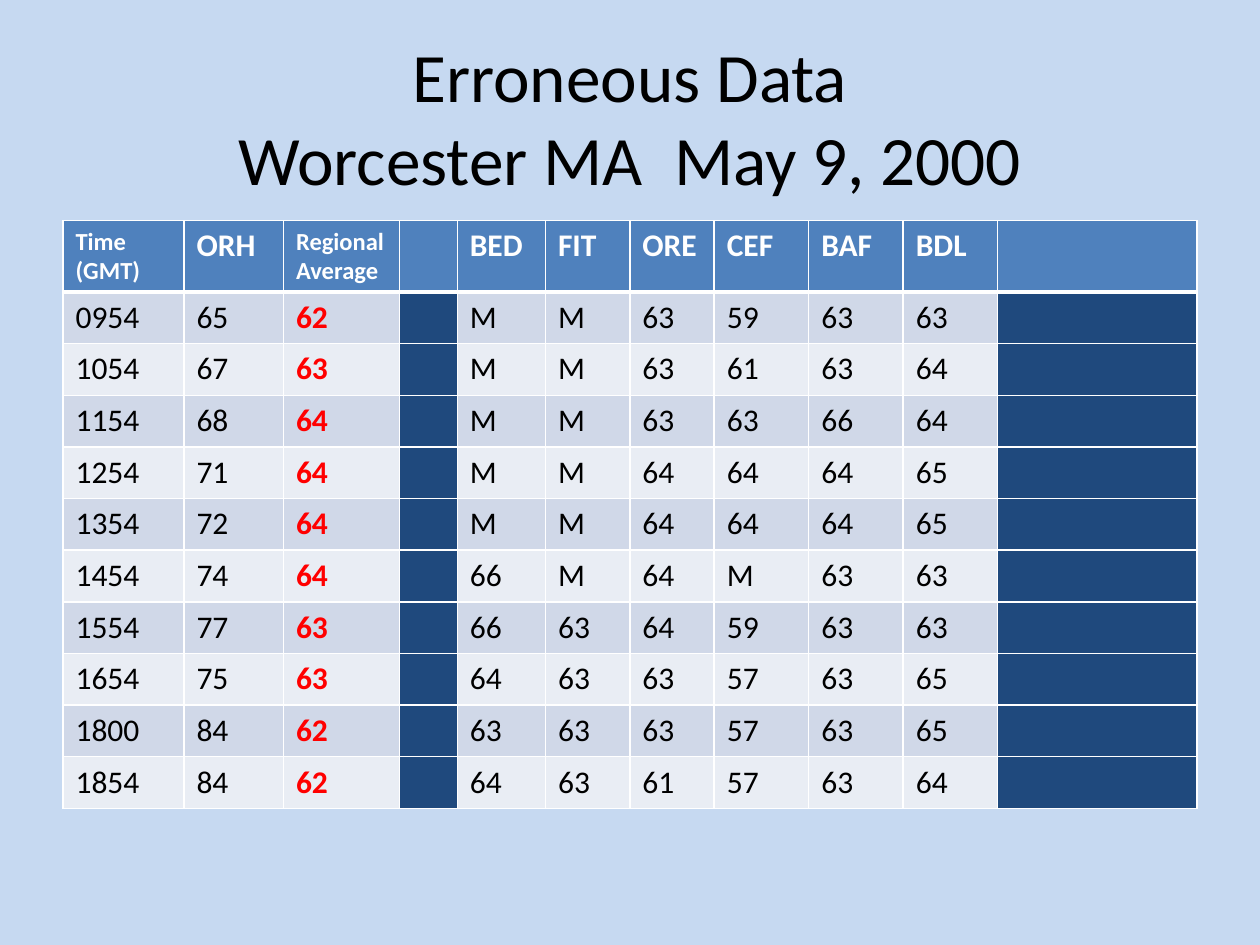
from lxml import etree
from pptx import Presentation, util as u
from pptx.dml.color import RGBColor
from pptx.enum import text
from pptx.oxml.ns import qn

WIDTH, HEIGHT = u.Inches(10), u.Inches(7.5)
MARGIN = 0.05  # share of the slide's width

# Table content
COLUMNS = [0.96, 0.79, 0.92, 0.46, 0.7, 0.67, 0.67, 0.75, 0.75, 0.75, 1.58]
ROW_HEIGHT = 0.41
AVERAGE, SPACERS = 2, (3, 10)
HEADER = ["Time (GMT)", "ORH", "Regional Average", "",
          "BED", "FIT", "ORE", "CEF", "BAF", "BDL", ""]
# Time, ORH, regional average, then the six nearby stations
READINGS = """
0954 65 62 M M 63 59 63 63
1054 67 63 M M 63 61 63 64
1154 68 64 M M 63 63 66 64
1254 71 64 M M 64 64 64 65
1354 72 64 M M 64 64 64 65
1454 74 64 66 M 64 M 63 63
1554 77 63 66 63 64 59 63 63
1654 75 63 64 63 63 57 63 65
1800 84 62 63 63 63 57 63 65
1854 84 62 64 63 61 57 63 64
"""


def color(value):
    return RGBColor.from_string(value)


def paint(fill, value):
    fill.solid()
    fill.fore_color.rgb = color(value)


def write(tf, content, size=18, ink="000000", bold=False,
          align=text.PP_ALIGN.LEFT):
    """Fill a text frame; each line after the first follows a line break."""
    p = tf.paragraphs[0]
    p.alignment = align
    p.font.size = u.Pt(size)
    for i, line in enumerate(content.split("\n")):
        if i:
            p.add_line_break()
        r = p.add_run()
        r.text = line
        r.font.name = "Calibri"
        r.font.size = u.Pt(size)
        r.font.bold = bold
        r.font.color.rgb = color(ink)


def add_title(s, content):
    tb = s.shapes.add_textbox(int(WIDTH * MARGIN), int(HEIGHT * 0.04),
                              int(WIDTH * (1 - 2 * MARGIN)), u.Inches(1.25))
    tf = tb.text_frame
    tf.word_wrap = True
    tf.vertical_anchor = text.MSO_ANCHOR.MIDDLE
    write(tf, content, size=39.6, align=text.PP_ALIGN.CENTER)


def set_borders(cell, **widths):
    """Draw white cell borders; widths are points keyed by side L, R, T, B."""
    tc_pr = cell._tc.get_or_add_tcPr()
    for side in "LRTB":
        ln = etree.SubElement(tc_pr, qn(f"a:ln{side}"),
                              w=str(u.Pt(widths.get(side, 1))))
        fill = etree.SubElement(ln, qn("a:solidFill"))
        etree.SubElement(fill, qn("a:srgbClr"), val="FFFFFF")


def style_header(cell, label):
    set_borders(cell, B=3)
    paint(cell.fill, "4F81BD")
    if label:
        write(cell.text_frame, label, size=14 if " " in label else 18,
              ink="FFFFFF", bold=True)


def style_reading(cell, value, row, col):
    set_borders(cell, T=3 if row == 1 else 1)
    if col in SPACERS:
        paint(cell.fill, "1F497D")
        return
    paint(cell.fill, "D0D8E8" if row % 2 else "E9EDF4")
    is_average = col == AVERAGE
    write(cell.text_frame, value, bold=is_average,
          ink="FF0000" if is_average else "000000")


def add_readings(s):
    rows = [HEADER]
    for line in READINGS.strip().splitlines():
        values = line.split()
        for col in SPACERS:
            values.insert(col, "")
        rows.append(values)

    table = s.shapes.add_table(
        len(rows), len(COLUMNS), int(WIDTH * MARGIN), u.Inches(1.75),
        u.Inches(sum(COLUMNS)), u.Inches(ROW_HEIGHT * len(rows))).table
    for column, width in zip(table.columns, COLUMNS):
        column.width = u.Inches(width)
    for i, values in enumerate(rows):
        for j, value in enumerate(values):
            if i == 0:
                style_header(table.cell(i, j), value)
            else:
                style_reading(table.cell(i, j), value, i, j)


def main():
    prs = Presentation()
    prs.slide_width, prs.slide_height = WIDTH, HEIGHT
    s = prs.slides.add_slide(prs.slide_layouts[6])
    paint(s.background.fill, "C6D9F1")
    add_title(s, "Erroneous Data\nWorcester MA  May 9, 2000")
    add_readings(s)
    prs.save("out.pptx")


if __name__ == "__main__":
    main()
